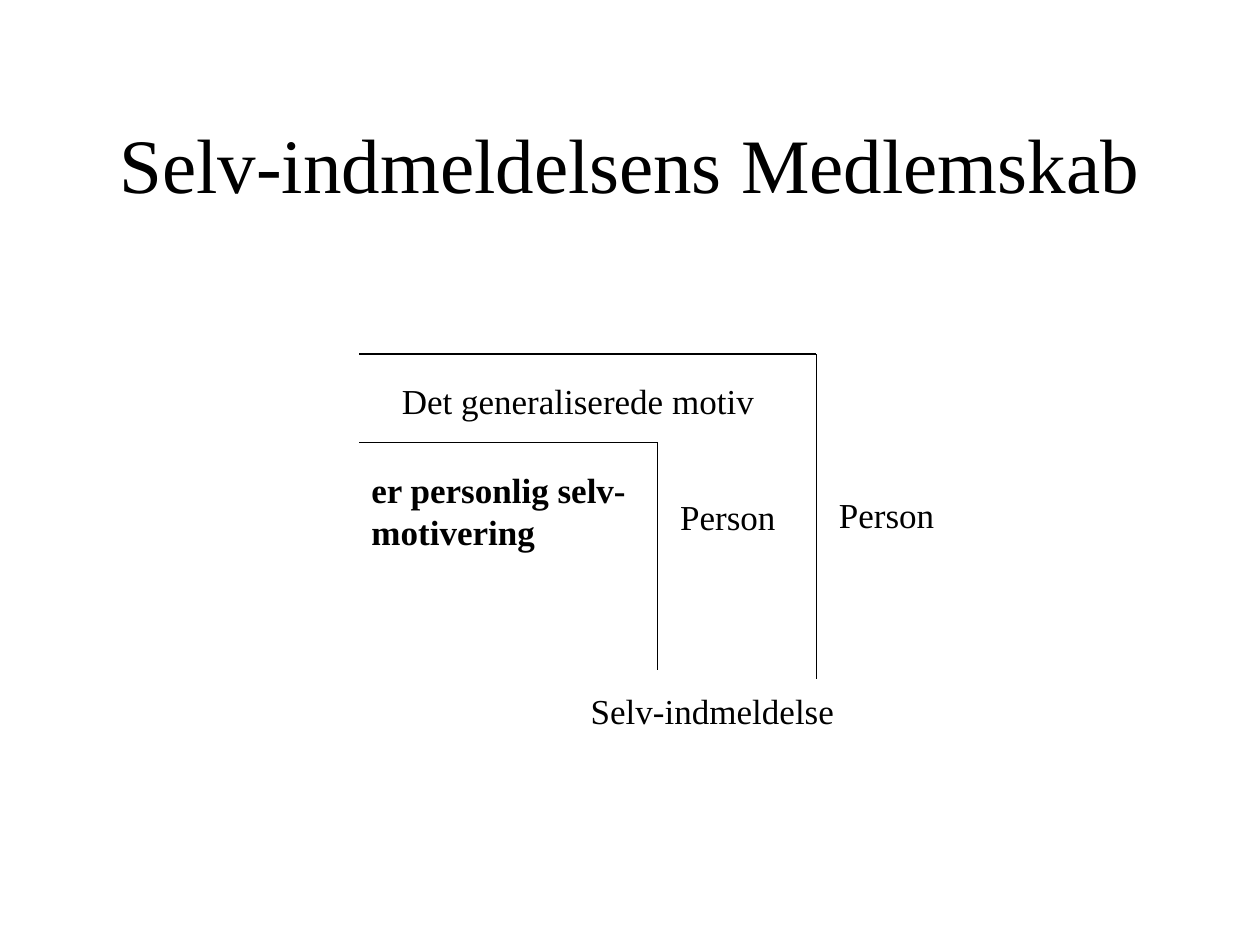
from lxml import etree
from pptx import Presentation
from pptx.dml.color import RGBColor
from pptx.enum.shapes import MSO_CONNECTOR
from pptx.enum.text import MSO_ANCHOR, MSO_AUTO_SIZE, PP_ALIGN
from pptx.oxml.ns import qn
from pptx.util import Inches, Pt

STRAIGHT = MSO_CONNECTOR.STRAIGHT
MIDDLE = MSO_ANCHOR.MIDDLE
TOP = MSO_ANCHOR.TOP
NO_AUTOFIT = MSO_AUTO_SIZE.NONE
GROW = MSO_AUTO_SIZE.SHAPE_TO_FIT_TEXT
LEFT = PP_ALIGN.LEFT
CENTER = PP_ALIGN.CENTER
TITLE_ONLY = 5
BLACK = "000000"


def color(value):
    return RGBColor.from_string(value)


def write(shape, text, size=20, bold=False, align=LEFT, anchor=TOP, wrap=False, fit=GROW):
    frame = shape.text_frame
    frame.auto_size = fit
    frame.word_wrap = wrap
    frame.vertical_anchor = anchor
    paragraph = frame.paragraphs[0]
    paragraph.alignment = align
    run = paragraph.add_run()
    run.text = text
    run.font.name = "Times New Roman"
    run.font.size = Pt(size)
    run.font.bold = bold
    run.font.color.rgb = color(BLACK)


presentation = Presentation()
presentation.slide_width = Inches(10)
presentation.slide_height = Inches(7.5)
slide = presentation.slides.add_slide(presentation.slide_layouts[TITLE_ONLY])

title = slide.shapes.title
title.left, title.top = Inches(0.75), Inches(0.67)
title.width, title.height = Inches(8.5), Inches(1.25)
write(title, "Selv-indmeldelsens Medlemskab", size=44, align=CENTER,
      anchor=MIDDLE, wrap=True, fit=NO_AUTOFIT)

bracket_left = 2.85
brackets = [(6.48, 2.81, 5.39), (5.22, 3.51, 5.32)]
for right, top, bottom in brackets:
    for start_x, end_y in [(bracket_left, top), (right, bottom)]:
        line = slide.shapes.add_connector(
            STRAIGHT, Inches(start_x), Inches(top), Inches(right), Inches(end_y))
        line.line.color.rgb = color(BLACK)
        line.line.width = Pt(0.75)
        etree.SubElement(line._element.spPr, qn("a:effectLst"))

labels = [
    ("Det generaliserede motiv", 3.09, 2.96, 3.02, 0.44, {}),
    ("er personlig selv-motivering", 2.85, 3.67, 2.44, 0.77, {"bold": True, "wrap": True}),
    ("Person", 5.3, 3.88, 0.96, 0.44, {}),
    ("Person", 6.56, 3.87, 0.96, 0.44, {}),
    ("Selv-indmeldelse", 4.59, 5.42, 2.14, 0.44, {}),
]
for text, left, top, width, height, text_format in labels:
    label = slide.shapes.add_textbox(Inches(left), Inches(top), Inches(width), Inches(height))
    write(label, text, **text_format)

presentation.save("out.pptx")
